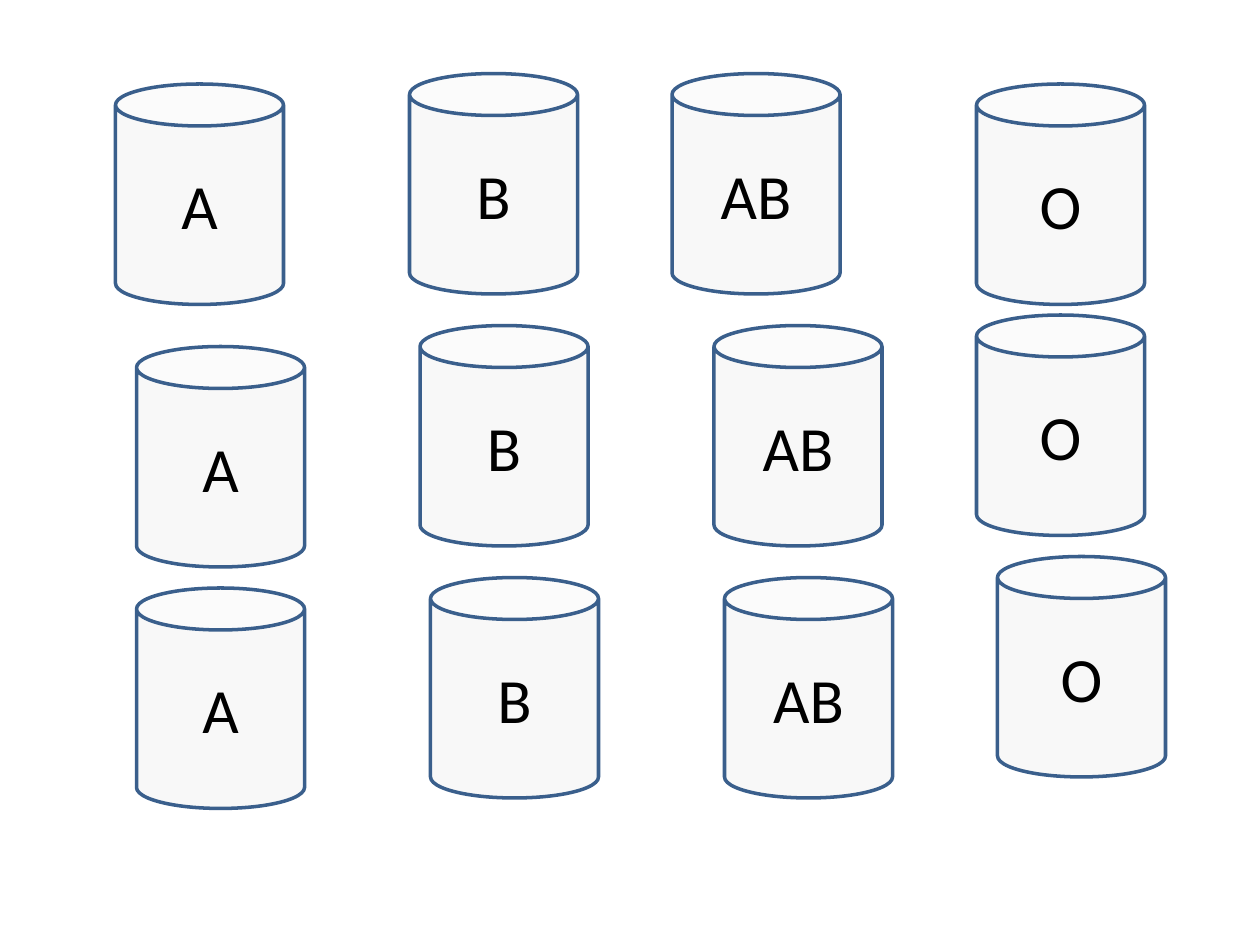
from lxml.etree import SubElement
from pptx import Presentation
from pptx.dml.color import RGBColor
from pptx.enum.shapes import MSO_SHAPE
from pptx.enum.text import MSO_ANCHOR, PP_ALIGN
from pptx.oxml.ns import qn
from pptx.util import Inches, Pt

COLORS = {"fill": "F2F2F2", "outline": "3A5F8C", "text": "000000"}
FILL_OPACITY = 48  # percent

# Cans sit on a grid of twelfths of an inch
GRID = Inches(1) / 12
CAN_WIDTH, CAN_HEIGHT = 16, 21

# Left and top of each can in grid steps, from the top row down, by blood group
CANS = {
    "A": [(11, 8), (13, 33), (13, 56)],
    "B": [(39, 7), (40, 31), (41, 55)],
    "AB": [(64, 7), (68, 31), (69, 55)],
    "O": [(93, 8), (93, 30), (95, 53)],
}


def color(name):
    return RGBColor.from_string(COLORS[name])


def set_opacity(shape, percent):
    """Make a solid fill partly transparent."""
    fill_color = shape.element.spPr.find(qn("a:solidFill"))[0]
    SubElement(fill_color, qn("a:alpha"), val=str(percent * 1000))


def add_can(page, label, *box):
    left, top, width, height = (round(steps * GRID) for steps in box)
    can = page.shapes.add_shape(MSO_SHAPE.CAN, left, top, width, height)
    can.shadow.inherit = False
    can.fill.solid()
    can.fill.fore_color.rgb = color("fill")
    set_opacity(can, FILL_OPACITY)
    can.line.color.rgb = color("outline")
    can.line.width = Pt(2)

    # Label
    frame = can.text_frame
    frame.vertical_anchor = MSO_ANCHOR.MIDDLE
    para = frame.paragraphs[0]
    para.text = label
    para.alignment = PP_ALIGN.CENTER
    para.font.name = "Calibri"
    para.font.size = Pt(36)
    para.font.color.rgb = color("text")


def add_blood_groups(page):
    for label, positions in CANS.items():
        for left, top in positions:
            add_can(page, label, left, top, CAN_WIDTH, CAN_HEIGHT)


def main():
    deck = Presentation()
    deck.slide_width, deck.slide_height = Inches(10), Inches(7.5)
    page = deck.slides.add_slide(deck.slide_layouts[6])  # blank layout
    add_blood_groups(page)
    deck.save("out.pptx")


if __name__ == "__main__":
    main()
